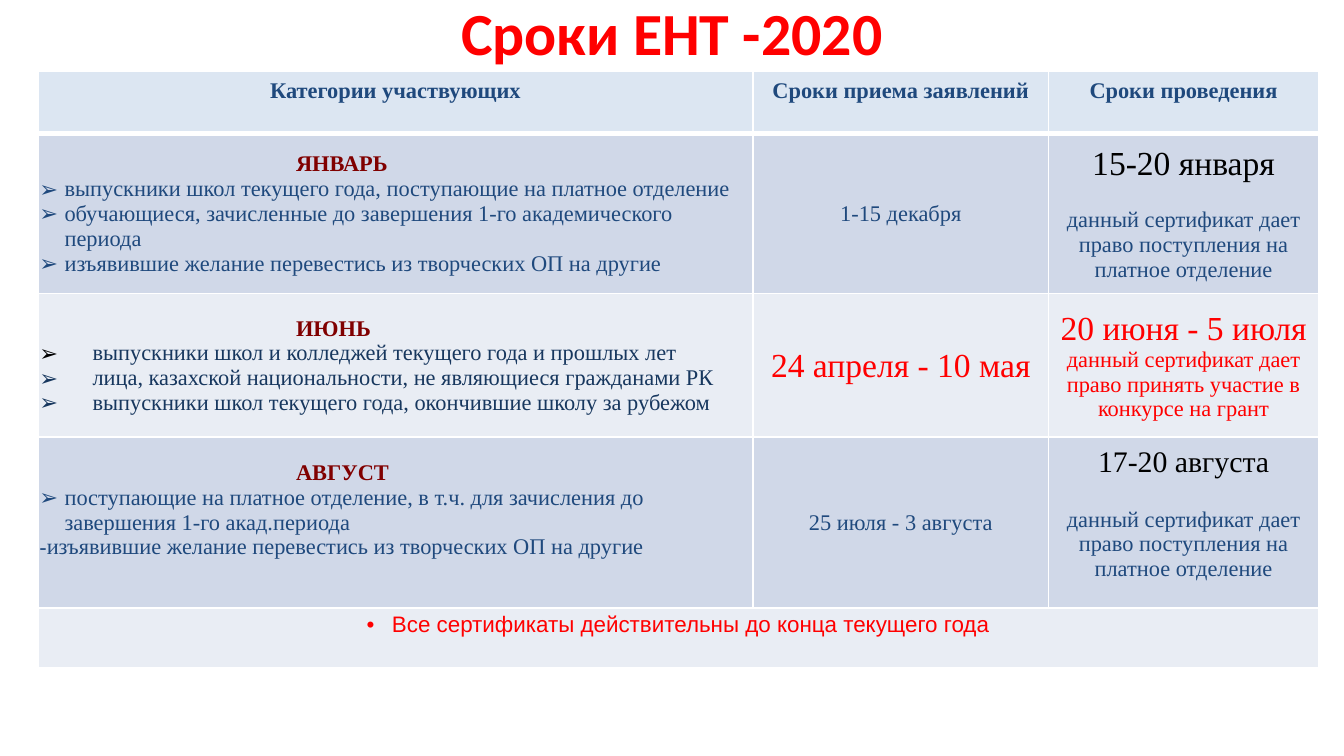
from lxml import etree
from pptx import Presentation
from pptx import util as u
from pptx.dml import color
from pptx.enum import text
from pptx.oxml import ns

NAVY, RED, MAROON, BLACK = "1F497D", "FF0000", "800000", "000000"
DARK, HEAD, BAND, PALE = "17375E", "DCE6F2", "D0D8E8", "E9EDF4"
CENTER = text.PP_ALIGN.CENTER


def rgb(value):
    return color.RGBColor.from_string(value)


class Schedule:
    """Holds the text style and the page, with a method for each kind of element."""

    font = "Times New Roman"
    size = 12

    def __init__(self, deck):
        self.page = deck.slides.add_slide(deck.slide_layouts[5])

    def style(self, font, size, hue, bold=False, name=None):
        font.name = name or self.font
        font.size = u.Pt(size)
        font.bold = bold
        font.color.rgb = rgb(hue)

    def title(self, words, left, top, width, height):
        box = self.page.shapes.title
        box.left, box.top, box.width, box.height = map(u.Pt, (left, top, width, height))
        frame = box.text_frame
        frame.auto_size = text.MSO_AUTO_SIZE.NONE
        frame.vertical_anchor = text.MSO_ANCHOR.MIDDLE
        frame.text = words
        para = frame.paragraphs[0]
        para.alignment = CENTER
        self.style(para.font, 32, RED, True, "Calibri")

    def table(self, left, top, widths, heights):
        frame = self.page.shapes.add_table(
            len(heights), len(widths), u.Pt(left), u.Pt(top),
            u.Pt(sum(widths)), u.Pt(sum(heights)))
        for column, width in zip(frame.table.columns, widths):
            column.width = u.Pt(width)
        for row, height in zip(frame.table.rows, heights):
            row.height = u.Pt(height)
        return frame.table

    def cell(self, cell, fill, margins=(0.7, 0.7, 0.7, 0), anchor="MIDDLE", rule=1):
        cell.fill.solid()
        cell.fill.fore_color.rgb = rgb(fill)
        cell.vertical_anchor = text.MSO_ANCHOR[anchor]
        (cell.margin_left, cell.margin_top,
         cell.margin_right, cell.margin_bottom) = map(u.Pt, margins)
        props = cell._tc.get_or_add_tcPr()
        for place, side in enumerate("LRTB"):
            line = etree.Element(ns.qn("a:ln" + side))
            line.set("w", str(u.Pt(rule if side == "B" else 1)))
            solid = etree.SubElement(line, ns.qn("a:solidFill"))
            etree.SubElement(solid, ns.qn("a:srgbClr")).set("val", "FFFFFF")
            props.insert(place, line)
        return cell.text_frame

    def para(self, frame, words, hue=NAVY, size=None, bold=False, align=CENTER,
             name=None, after=0, indent=0):
        first = frame.paragraphs[0]
        para = frame.add_paragraph() if first.runs else first
        para.alignment = align
        para.space_after = u.Pt(after)
        if indent:
            para._p.get_or_add_pPr().set("marL", str(u.Pt(indent)))
        para.add_run().text = words
        self.style(para.font, size or self.size, hue, bold, name)
        return para

    def month(self, frame, words):
        self.para(frame, words, MAROON, bold=True, align=text.PP_ALIGN.LEFT, indent=137.5)

    def bullet(self, frame, words, hue=NAVY, mark="➢", indent=13.5, hang=13.5,
               mark_hue=None, align=text.PP_ALIGN.LEFT, name=None):
        para = self.para(frame, words, hue, align=align, name=name, indent=indent)
        props = para._p.get_or_add_pPr()
        props.set("marL", str(u.Pt(indent)))
        props.set("indent", str(-u.Pt(hang)))
        tint = etree.Element(ns.qn("a:buClr"))
        etree.SubElement(tint, ns.qn("a:srgbClr")).set("val", mark_hue or hue)
        face = etree.Element(ns.qn("a:buFont"))
        face.set("typeface", "Arial")
        char = etree.Element(ns.qn("a:buChar"))
        char.set("char", mark)
        default = props.find(ns.qn("a:defRPr"))
        for part in (tint, face, char):
            default.addprevious(part)


def main():
    deck = Presentation()
    deck.slide_width, deck.slide_height = u.Pt(720), u.Pt(405)
    plan = Schedule(deck)
    plan.title("Сроки ЕНТ -2020", 36, 7.2, 648, 20)
    table = plan.table(20.4, 38.4, (383, 158.4, 144.6), (33.2, 85.6, 77, 91.5, 32.3))

    headings = ("Категории участвующих", "Сроки приема заявлений", "Сроки проведения")
    for column, words in enumerate(headings):
        frame = plan.cell(table.cell(0, column), HEAD, (7.2, 3.6, 7.2, 3.6), "TOP", 3)
        plan.para(frame, words, bold=True)

    transfer = "изъявившие желание перевестись из творческих ОП на другие"
    paid = "данный сертификат дает право поступления на платное отделение"

    group, intake, exam = [plan.cell(table.cell(1, column), BAND) for column in range(3)]
    plan.month(group, "ЯНВАРЬ")
    for words in ("выпускники школ текущего года, поступающие на платное отделение",
                  "обучающиеся, зачисленные до завершения 1-го академического периода",
                  transfer):
        plan.bullet(group, words)
    plan.para(intake, "1-15 декабря")
    plan.para(exam, "15-20 января", BLACK, 18, after=13.5)
    plan.para(exam, paid)

    group, intake, exam = [plan.cell(table.cell(2, column), PALE) for column in range(3)]
    plan.month(group, "ИЮНЬ")
    for words, mark_hue in (
            ("выпускники школ и колледжей текущего года и прошлых лет", BLACK),
            ("лица, казахской национальности, не являющиеся гражданами РК", DARK),
            ("выпускники школ текущего года, окончившие школу за рубежом", DARK)):
        plan.bullet(group, words, DARK, indent=28.5, hang=28.5, mark_hue=mark_hue)
    plan.para(intake, "24 апреля - 10 мая", RED, 18)
    para = plan.para(exam, "20 июня - 5 июля ", RED)
    para.runs[0].font.size = u.Pt(18)
    para.add_run().text = "данный сертификат дает право принять участие в конкурсе на грант"

    group, intake, exam = [
        plan.cell(table.cell(3, column), BAND, (0.7, 0.7, 0.7, bottom))
        for column, bottom in enumerate((14, 0, 10))]
    plan.month(group, "АВГУСТ")
    plan.bullet(group, "поступающие на платное отделение, в т.ч. для зачисления до "
                       "завершения 1-го акад.периода")
    plan.bullet(group, transfer, mark="-", indent=0)
    plan.para(intake, "25 июля - 3 августа")
    plan.para(exam, "17-20 августа", BLACK, 16, after=15)
    plan.para(exam, paid)

    table.cell(4, 0).merge(table.cell(4, 2))
    footer = plan.cell(table.cell(4, 0), PALE, (0.7, 2.5, 0.7, 0), "TOP")
    plan.bullet(footer, "Все сертификаты действительны до конца текущего года", RED,
                mark="•", align=CENTER, name="Arial")
    deck.save("out.pptx")


if __name__ == "__main__":
    main()
